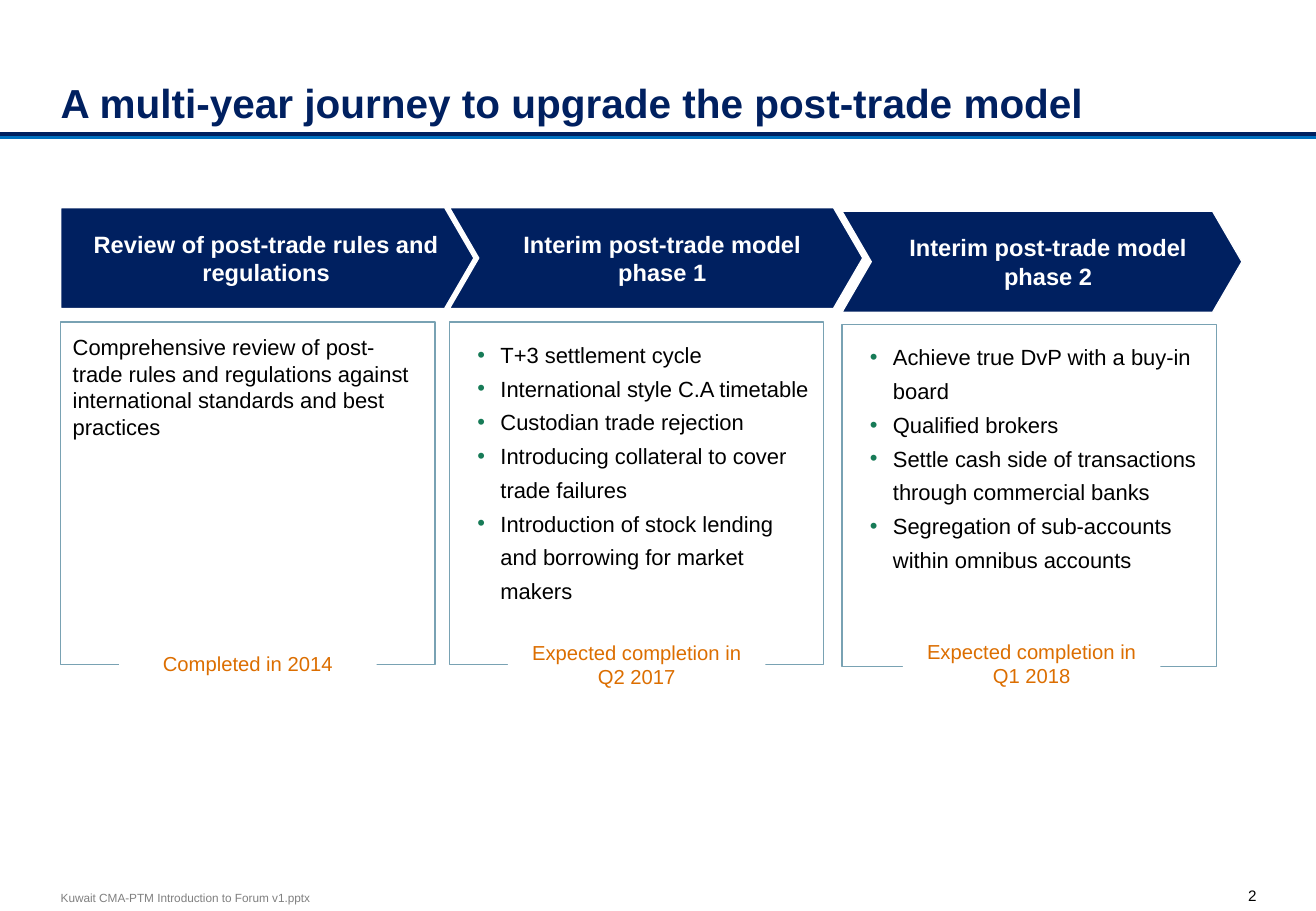
from dataclasses import dataclass

from lxml import etree
from pptx import Presentation
from pptx.dml.color import RGBColor
from pptx.enum.shapes import MSO_CONNECTOR, MSO_SHAPE
from pptx.enum.text import MSO_ANCHOR, PP_ALIGN
from pptx.oxml.ns import qn
from pptx.util import Inches, Pt

LEFT, CENTER, RIGHT = PP_ALIGN.LEFT, PP_ALIGN.CENTER, PP_ALIGN.RIGHT
TOP, MIDDLE, BOTTOM = MSO_ANCHOR.TOP, MSO_ANCHOR.MIDDLE, MSO_ANCHOR.BOTTOM
RECT, PENTAGON, CHEVRON = MSO_SHAPE.RECTANGLE, MSO_SHAPE.PENTAGON, MSO_SHAPE.CHEVRON

NAVY, BLUE, WHITE, BLACK = "002060", "0070C0", "FFFFFF", "000000"
BORDER, GREEN, ORANGE, GREY = "79A2B3", "177B57", "DC6E00", "808080"
SLIDE_W, SLIDE_H = 10.83, 7.5
HEADER_H, BOX_W, BOX_H, CAPTION_W = 0.83, 3.08, 2.82, 2.12


@dataclass
class Style:
    size: float
    color: str = BLACK
    bold: bool = False
    align: int = LEFT
    anchor: int = TOP
    insets: tuple[float, ...] = (0.1, 0.1, 0.1, 0.1)
    bullets: bool = False


@dataclass
class Phase:
    left: float
    top: float
    header_w: float
    header_shape: int
    header: str
    body: list[str]
    body_top: float
    caption: str
    caption_at: tuple[float, float, float]


HEADER = Style(14, WHITE, True, CENTER, MIDDLE, (0.2, 0.1, 0.1, 0.1))
BODY = Style(13)
BULLETS = Style(13, bullets=True)
CAPTION = Style(12, ORANGE, align=CENTER)
TITLE = Style(24, NAVY, True, anchor=BOTTOM, insets=(0, 0.05, 0, 0.05))
FOOTER = Style(7, GREY, anchor=MIDDLE, insets=(0, 0, 0, 0))
PAGE = Style(9, align=RIGHT, insets=(0, 0, 0, 0))

PHASES = [
    Phase(0.5, 1.71, 3.4, PENTAGON, "Review of post-trade rules and regulations",
          ["Comprehensive review of post-trade rules and regulations against "
           "international standards and best practices"],
          2.65, "Completed in 2014", (0.98, 5.26, 0.4)),
    Phase(3.7, 1.71, 3.4, CHEVRON, "Interim post-trade model phase 1",
          ["T+3 settlement cycle",
           "International style C.A timetable",
           "Custodian trade rejection",
           "Introducing collateral to cover trade failures",
           "Introduction of stock lending and borrowing for market makers"],
          2.65, "Expected completion in Q2 2017", (4.18, 5.17, 0.8)),
    Phase(6.93, 1.74, 3.29, CHEVRON, "Interim post-trade model phase 2",
          ["Achieve true DvP with a buy-in board",
           "Qualified brokers",
           "Settle cash side of transactions through commercial banks",
           "Segregation of sub-accounts within omnibus accounts"],
          2.67, "Expected completion in Q1 2018", (7.43, 5.16, 0.6)),
]


def rgb(color: str) -> RGBColor:
    return RGBColor.from_string(color)


def set_attrs(obj, values: dict) -> None:
    for name, value in values.items():
        setattr(obj, name, value)


def add_bullet(p) -> None:
    pPr = p._p.get_or_add_pPr()
    pPr.set("marL", str(Inches(0.32)))
    pPr.set("indent", str(Inches(-0.19)))
    clr = etree.SubElement(pPr, qn("a:buClr"))
    etree.SubElement(clr, qn("a:srgbClr"), val=GREEN)
    etree.SubElement(pPr, qn("a:buFont"), typeface="Arial")
    etree.SubElement(pPr, qn("a:buChar"), char="•")
    p.line_spacing = Pt(20)


def write(sp, lines: list[str], style: Style) -> None:
    tf = sp.text_frame
    left, top, right, bottom = map(Inches, style.insets)
    set_attrs(tf, {"word_wrap": True, "vertical_anchor": style.anchor,
                   "margin_left": left, "margin_top": top,
                   "margin_right": right, "margin_bottom": bottom})
    for i, line in enumerate(lines):
        p = tf.add_paragraph() if i else tf.paragraphs[0]
        if style.bullets:
            add_bullet(p)
        p.alignment = style.align
        r = p.add_run()
        r.text = line
        set_attrs(r.font, {"name": "Arial", "size": Pt(style.size), "bold": style.bold})
        r.font.color.rgb = rgb(style.color)


def add_text(s, at: tuple[float, ...], text: str, style: Style) -> None:
    write(s.shapes.add_textbox(*map(Inches, at)), [text], style)


def add_box(s, kind: int, at: tuple[float, ...], lines: list[str], style: Style,
            fill: str = "", line: str = ""):
    sp = s.shapes.add_shape(kind, *map(Inches, at))
    sp.shadow.inherit = False
    if fill:
        sp.fill.solid()
        sp.fill.fore_color.rgb = rgb(fill)
    else:
        sp.fill.background()
    if line:
        sp.line.color.rgb = rgb(line)
        sp.line.width = Pt(0.75)
    else:
        sp.line.fill.background()
    write(sp, lines, style)
    return sp


def add_title_rule(s) -> None:
    y = Inches(1.1)
    rule = s.shapes.add_connector(MSO_CONNECTOR.STRAIGHT, Inches(SLIDE_W), y, 0, y)
    rule.line.color.rgb = rgb(NAVY)
    rule.line.width = Pt(2.25)
    effects = etree.SubElement(rule._element.spPr, qn("a:effectLst"))
    shadow = etree.SubElement(effects, qn("a:outerShdw"), dist=str(Pt(2)),
                              dir="5400000", algn="t", rotWithShape="0")
    etree.SubElement(shadow, qn("a:srgbClr"), val=BLUE)


def add_phase(s, phase: Phase) -> None:
    header = add_box(s, phase.header_shape,
                     (phase.left, phase.top, phase.header_w, HEADER_H),
                     [phase.header], HEADER, NAVY, WHITE)
    header.adjustments[0] = 0.29
    add_box(s, RECT, (phase.left, phase.body_top, BOX_W, BOX_H), phase.body,
            BULLETS if len(phase.body) > 1 else BODY, line=BORDER)
    left, top, height = phase.caption_at
    add_box(s, RECT, (left, top, CAPTION_W, height), [phase.caption], CAPTION, WHITE)


def main() -> None:
    prs = Presentation()
    prs.slide_width, prs.slide_height = Inches(SLIDE_W), Inches(SLIDE_H)
    s = prs.slides.add_slide(prs.slide_layouts[6])
    add_text(s, (0.5, 7.33, 2.5, 0.12), "Kuwait CMA-PTM Introduction to Forum v1.pptx", FOOTER)
    add_title_rule(s)
    add_text(s, (10.13, 7.3, 0.21, 0.14), "2", PAGE)
    add_text(s, (0.5, 0.18, 9.83, 0.91),
             "A multi-year journey to upgrade the post-trade model", TITLE)
    for phase in PHASES:
        add_phase(s, phase)
    prs.save("out.pptx")


if __name__ == "__main__":
    main()
